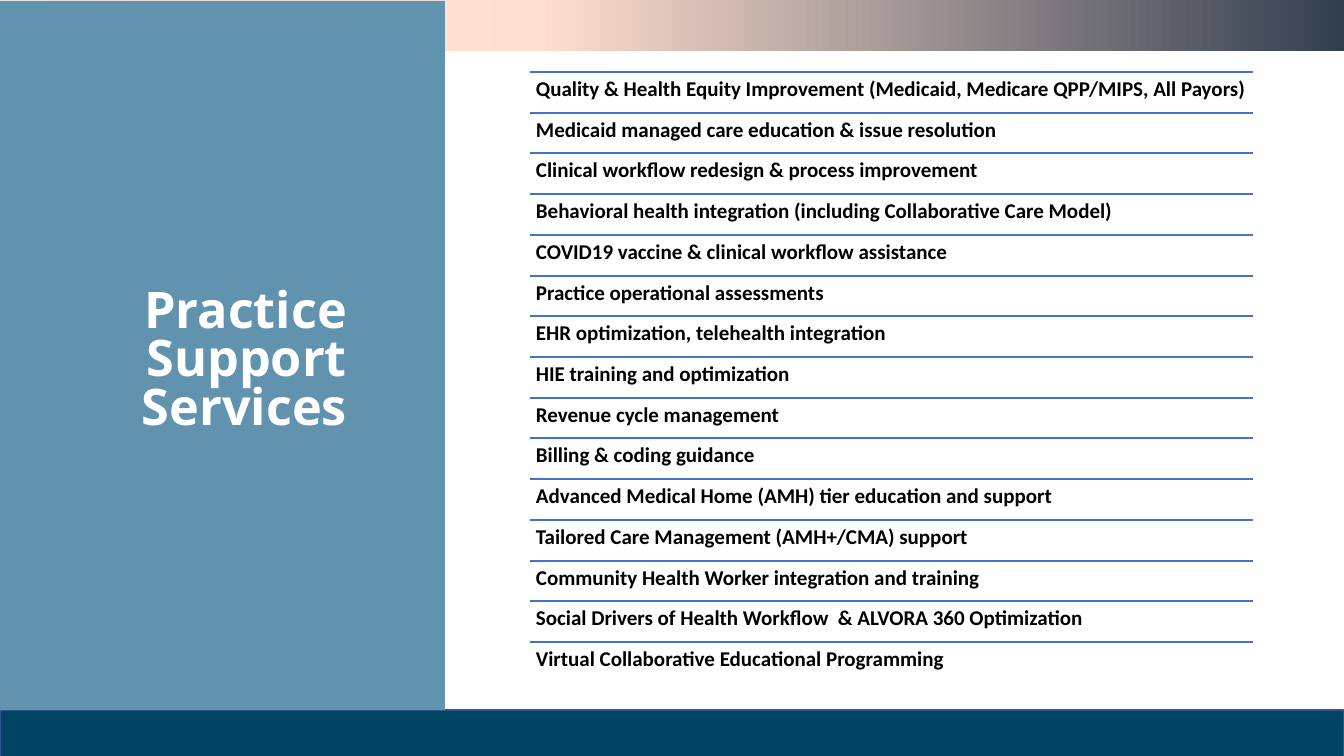
from copy import deepcopy

from pptx import Presentation
from pptx.dml.color import RGBColor
from pptx.enum.shapes import MSO_CONNECTOR as CONN, MSO_SHAPE as SHAPE
from pptx.enum.text import MSO_ANCHOR as ANCHOR, PP_ALIGN as ALIGN
from pptx.oxml import parse_xml
from pptx.oxml.ns import nsdecls
from pptx.util import Pt

EMU_PER_PX = 914400 / 100.8
NAVY = RGBColor(0x00, 0x43, 0x63)
NAVY_EDGE = RGBColor(0x32, 0x54, 0x91)
STEEL = RGBColor(0x61, 0x93, 0xAF)
RULE_BLUE = RGBColor(0x44, 0x72, 0xC4)
GREY = RGBColor(0x7C, 0x7C, 0x7C)
BLACK = RGBColor(0x00, 0x00, 0x00)
WHITE = RGBColor(0xFF, 0xFF, 0xFF)
BAND_STOPS = [
    (0, RGBColor(0x33, 0x3F, 0x50)),
    (0.6, RGBColor(0xFF, 0xDF, 0xCF)),
    (1, RGBColor(0xFF, 0xEF, 0xE7)),
]
SERVICES = [
    "Quality & Health Equity Improvement (Medicaid, Medicare QPP/MIPS, All Payors)",
    "Medicaid managed care education & issue resolution",
    "Clinical workflow redesign & process improvement",
    "Behavioral health integration (including Collaborative Care Model)",
    "COVID19 vaccine & clinical workflow assistance",
    "Practice operational assessments",
    "EHR optimization, telehealth integration",
    "HIE training and optimization",
    "Revenue cycle management",
    "Billing & coding guidance",
    "Advanced Medical Home (AMH) tier education and support",
    "Tailored Care Management (AMH+/CMA) support",
    "Community Health Worker integration and training",
    "Social Drivers of Health Workflow  & ALVORA 360 Optimization",
    "Virtual Collaborative Educational Programming",
]
LIST_LEFT, LIST_WIDTH = 530, 723
LIST_TOP, LAST_TOP = 72, 642


def px(*lengths):
    return [round(n * EMU_PER_PX) for n in lengths]


class SlideBuilder:
    """Draws styled elements, measured in px, on the current slide."""

    def __init__(self, slide):
        self.slide = slide

    def rect(self, x, y, w, h, color=None, edge=None):
        s = self.slide.shapes.add_shape(SHAPE.RECTANGLE, *px(x, y, w, h))
        s.shadow.inherit = False
        if color is not None:
            s.fill.solid()
            s.fill.fore_color.rgb = color
        if edge is None:
            s.line.fill.background()
        else:
            s.line.color.rgb = edge
            s.line.width = Pt(1)
        return s

    def gradient_band(self, x, y, w, h, stops, angle):
        s = self.rect(x, y, w, h)
        s.fill.gradient()
        s.fill.gradient_angle = angle
        last = s._element.xpath(".//a:gs")[-1]
        last.addnext(deepcopy(last))
        for stop, (position, color) in zip(s.fill.gradient_stops, stops):
            stop.position = position
            stop.color.rgb = color

    def rule(self, x, y, w, color, width):
        s = self.slide.shapes.add_connector(CONN.STRAIGHT, *px(x, y, x + w, y))
        s.line.color.rgb = color
        s.line.width = Pt(width)
        s._element.spPr.append(parse_xml(f"<a:effectLst {nsdecls('a')}/>"))

    def text(self, x, y, w, h, text, font, size, color, inset, spacing,
             align=ALIGN.LEFT, anchor=ANCHOR.TOP):
        tf = self.slide.shapes.add_textbox(*px(x, y, w, h)).text_frame
        tf.word_wrap = True
        tf.vertical_anchor = anchor
        tf.margin_left = tf.margin_right = px(inset)[0]
        tf.margin_top = tf.margin_bottom = px(inset)[0]
        p = tf.paragraphs[0]
        p.text = text
        p.alignment = align
        p.line_spacing = spacing
        p.font.name = font
        p.font.size = Pt(size)
        p.font.bold = True
        p.font.color.rgb = color


def main():
    prs = Presentation()
    prs.slide_width, prs.slide_height = px(1344, 756)
    sb = SlideBuilder(prs.slides.add_slide(prs.slide_layouts[6]))

    sb.gradient_band(0, 0, 1344, 51, BAND_STOPS, 180)
    sb.rule(0, 725, 1344, GREY, 2.25)

    pitch = (LAST_TOP - LIST_TOP) / (len(SERVICES) - 1)
    for i, service in enumerate(SERVICES):
        top = round(LIST_TOP + i * pitch)
        sb.rule(LIST_LEFT, top, LIST_WIDTH, RULE_BLUE, 1)
        sb.text(LIST_LEFT, top, LIST_WIDTH, 41, service, "Calibri", 15, BLACK, 6, 0.9)

    sb.rect(0, 710, 1344, 57, NAVY, NAVY_EDGE)
    sb.rect(0, 1, 445, 709, STEEL)
    sb.text(100, 121, 257, 324, "Practice Support\vServices", "Open Sans", 36, WHITE,
            10, 0.8, ALIGN.RIGHT, ANCHOR.BOTTOM)

    prs.save("out.pptx")


if __name__ == "__main__":
    main()
